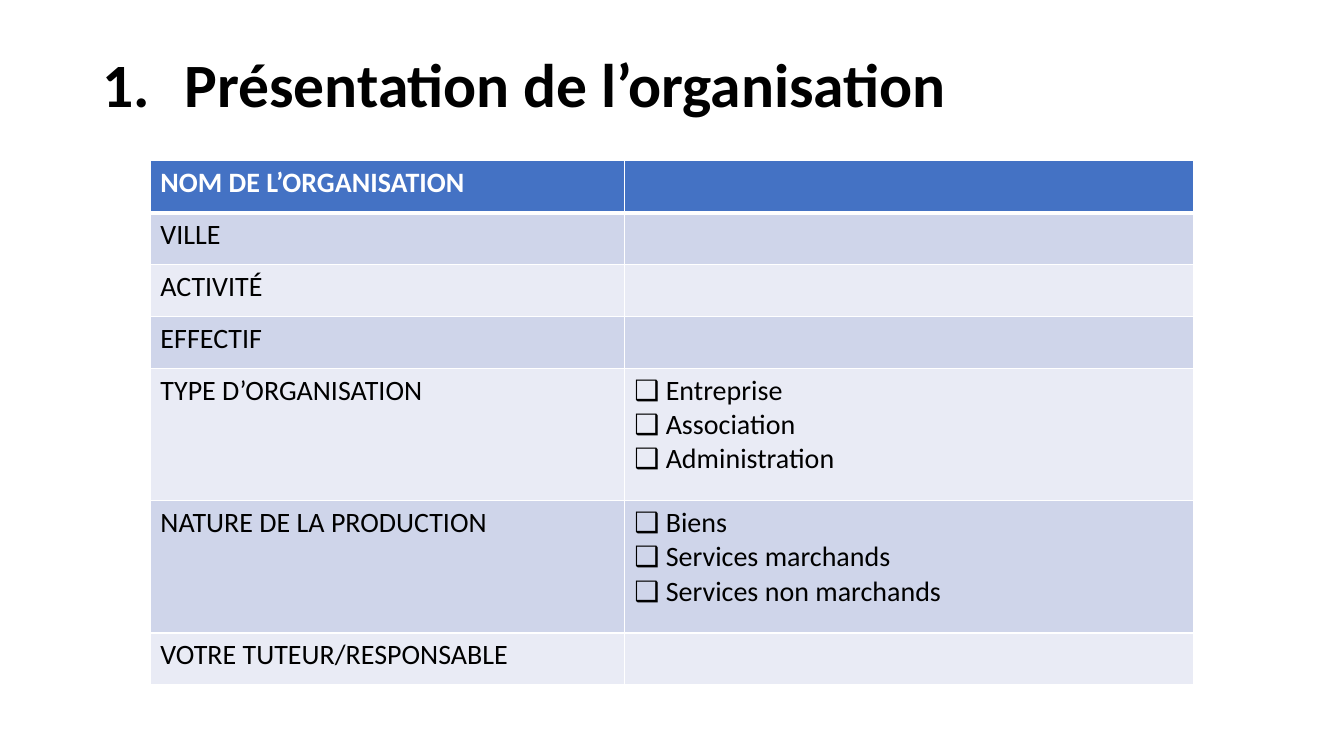
from dataclasses import dataclass

from lxml.etree import SubElement
from pptx import Presentation
from pptx.dml.color import RGBColor
from pptx.enum.text import MSO_ANCHOR, PP_ALIGN
from pptx.oxml.ns import qn
from pptx.util import Cm, Pt

TITLE = "Présentation de l’organisation"
ROWS = [
    ("NOM DE L’ORGANISATION", []),
    ("VILLE", []),
    ("ACTIVITÉ", []),
    ("EFFECTIF", []),
    ("TYPE D’ORGANISATION", ["Entreprise", "Association", "Administration"]),
    ("NATURE DE LA PRODUCTION", ["Biens", "Services marchands", "Services non marchands"]),
    ("VOTRE TUTEUR/RESPONSABLE", []),
]
CHECKBOX = "❑"
SLIDE_SIZE = {"slide_width": Cm(33.87), "slide_height": Cm(19.05)}
TITLE_BOX = {"left": Cm(2.33), "top": Cm(0.37), "width": Cm(29.21), "height": Cm(3.68)}
TABLE_LEFT, TABLE_TOP = Cm(3.79), Cm(4.05)
COLUMN_WIDTHS = [Cm(11.94), Cm(14.35)]
LINE_ROW, CHOICE_ROW = Cm(1.31), Cm(3.33)
NUMBER_INDENT = Cm(2.06)


@dataclass(frozen=True)
class Theme:
    font: str = "Calibri"
    title_size: int = 44
    table_size: int = 20
    text: str = "000000"
    header_text: str = "FFFFFF"
    header_fill: str = "4472C4"
    bands: tuple = ("E9EBF5", "CFD5EA")
    border: str = "FFFFFF"
    thin: int = 1
    thick: int = 3


THEME = Theme()


def apply_format(target, values):
    for name, value in values.items():
        setattr(target, name, value)


def format_font(font, size, color, bold):
    apply_format(font, {"name": THEME.font, "size": Pt(size), "bold": bold})
    font.color.rgb = RGBColor.from_string(color)


def add_title(slide):
    title = slide.shapes.title
    apply_format(title, TITLE_BOX)
    frame = title.text_frame
    apply_format(frame, {"text": TITLE, "vertical_anchor": MSO_ANCHOR.MIDDLE, "word_wrap": True})
    paragraph = frame.paragraphs[0]
    apply_format(paragraph, {"alignment": PP_ALIGN.LEFT, "line_spacing": 0.9})
    format_font(paragraph.runs[0].font, THEME.title_size, THEME.text, True)
    properties = paragraph._p.get_or_add_pPr()
    properties.set("marL", str(NUMBER_INDENT))
    properties.set("indent", str(-NUMBER_INDENT))
    SubElement(properties, qn("a:buFont"), typeface="+mj-lt")
    SubElement(properties, qn("a:buAutoNum"), type="arabicPeriod")


def set_borders(cell, row_index):
    widths = {"L": THEME.thin, "R": THEME.thin, "T": THEME.thin, "B": THEME.thin}
    if row_index == 0:
        widths["B"] = THEME.thick
    elif row_index == 1:
        widths["T"] = THEME.thick
    properties = cell._tc.get_or_add_tcPr()
    for side, width in widths.items():
        line = SubElement(properties, qn(f"a:ln{side}"), w=str(Pt(width)))
        fill = SubElement(line, qn("a:solidFill"))
        SubElement(fill, qn("a:srgbClr"), val=THEME.border)


def fill_cell(cell, text, row_index):
    header = row_index == 0
    set_borders(cell, row_index)
    cell.fill.solid()
    fill = THEME.header_fill if header else THEME.bands[row_index % 2]
    cell.fill.fore_color.rgb = RGBColor.from_string(fill)
    cell.text = text
    color = THEME.header_text if header else THEME.text
    for paragraph in cell.text_frame.paragraphs:
        format_font(paragraph.font, THEME.table_size, color, header)
        for run in paragraph.runs:
            format_font(run.font, THEME.table_size, color, header)


def add_organisation_table(slide):
    heights = [CHOICE_ROW if choices else LINE_ROW for _, choices in ROWS]
    table = slide.shapes.add_table(
        len(ROWS), len(COLUMN_WIDTHS), TABLE_LEFT, TABLE_TOP, sum(COLUMN_WIDTHS), sum(heights)
    ).table
    for column, width in zip(table.columns, COLUMN_WIDTHS):
        column.width = width
    for row_index, (label, choices) in enumerate(ROWS):
        table.rows[row_index].height = heights[row_index]
        answer = "\n".join(f"{CHECKBOX} {choice}" for choice in choices)
        for column_index, text in enumerate((label, answer)):
            fill_cell(table.cell(row_index, column_index), text, row_index)


def main():
    """Build the slide that presents the organisation."""
    presentation = Presentation()
    apply_format(presentation, SLIDE_SIZE)
    slide = presentation.slides.add_slide(presentation.slide_layouts[5])
    add_title(slide)
    add_organisation_table(slide)
    presentation.save("out.pptx")


if __name__ == "__main__":
    main()
